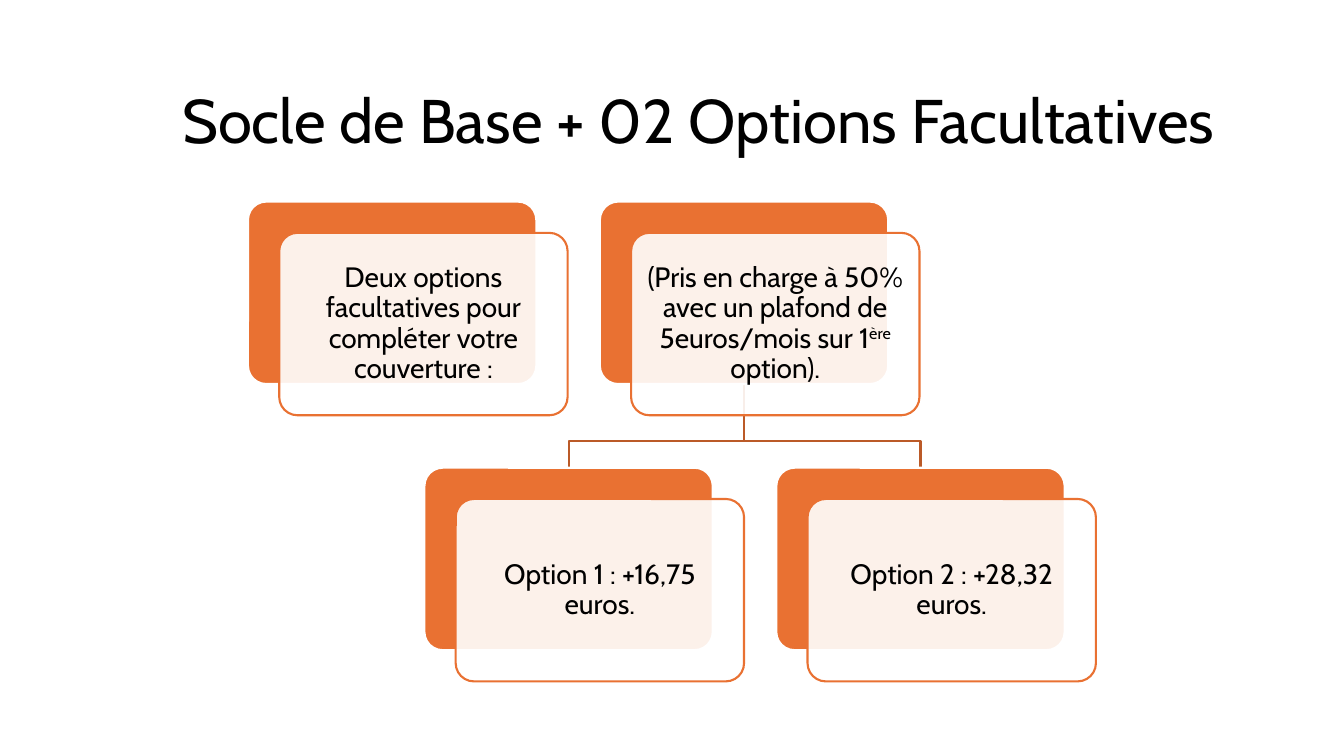
from lxml import etree
from pptx import Presentation
from pptx.dml.color import RGBColor
from pptx.enum import shapes, text
from pptx.oxml import ns
from pptx.util import Inches, Pt

ORANGE = RGBColor(0xE9, 0x71, 0x32)
BROWN = RGBColor(0xBB, 0x5A, 0x28)
WHITE = RGBColor(0xFF, 0xFF, 0xFF)
BLACK = RGBColor(0x00, 0x00, 0x00)
FONT = "Cabin"

CARD_W, CARD_H = 2.86, 1.81
SHIFT = 0.31
PITCH = 3.49
TOP_ROW, OPTION_ROW = 2, 4.64
TOP_LEFT, OPTION_LEFT = 2.46, 4.21

TOP_CARDS = [
    [("Deux options facultatives pour compléter votre couverture :", 0)],
    [("(Pris en charge à 50% avec un plafond de 5euros/mois sur 1", 0),
     ("ère", 30000), (" option).", 0)],
]
OPTION_CARDS = [
    [("Option 1 : +16,75 euros.", 0)],
    [("Option 2 : +28,32 euros.", 0)],
]


def format_run(r, size):
    """Give a run the slide's font and colour."""
    r.font.name = FONT
    r.font.size = Pt(size)
    r.font.color.rgb = BLACK


def add_title(slide, left, top, width, height):
    """Place the title, set slightly right of centre by its left inset."""
    sp = slide.shapes.title
    sp.left, sp.top, sp.width, sp.height = map(Inches, (left, top, width, height))
    tf = sp.text_frame
    tf.text = "Socle de Base + 02 Options Facultatives"
    tf.margin_left = Inches(0.62)
    tf.vertical_anchor = text.MSO_ANCHOR.MIDDLE
    p = tf.paragraphs[0]
    p.alignment = text.PP_ALIGN.CENTER
    p.line_spacing = 0.9
    format_run(p.runs[0], 44)


def add_panel(slide, left, top, fill, line):
    """Draw one rounded panel of a card."""
    sp = slide.shapes.add_shape(
        shapes.MSO_SHAPE.ROUNDED_RECTANGLE,
        Inches(left), Inches(top), Inches(CARD_W), Inches(CARD_H))
    sp.adjustments[0] = 0.1
    sp.shadow.inherit = False
    sp.fill.solid()
    sp.fill.fore_color.rgb = fill
    sp.line.color.rgb = line
    sp.line.width = Pt(1.5)
    return sp


def add_card(slide, left, top, parts):
    """Draw an orange panel and the translucent text panel over it."""
    add_panel(slide, left, top, ORANGE, WHITE)
    sp = add_panel(slide, left + SHIFT, top + SHIFT, WHITE, ORANGE)
    colour = sp.fill._xPr.find(".//" + ns.qn("a:srgbClr"))
    etree.SubElement(colour, ns.qn("a:alpha")).set("val", "90000")
    tf = sp.text_frame
    tf.word_wrap = True
    tf.vertical_anchor = text.MSO_ANCHOR.MIDDLE
    tf.margin_left = tf.margin_right = Inches(0.08)
    tf.margin_top = tf.margin_bottom = Inches(0.08)
    p = tf.paragraphs[0]
    p.alignment = text.PP_ALIGN.CENTER
    p.line_spacing = 0.9
    for words, baseline in parts:
        r = p.add_run()
        r.text = words
        format_run(r, 20)
        if baseline:
            r.font._element.set("baseline", str(baseline))


def add_branch(slide, start_x, start_y, end_x, end_y):
    """Draw an elbow line from a parent card down to an option card."""
    bend_y = end_y - 0.26
    points = [(start_x, bend_y), (end_x, bend_y), (end_x, end_y)]
    builder = slide.shapes.build_freeform(Inches(start_x), Inches(start_y))
    builder.add_line_segments(
        [(Inches(x), Inches(y)) for x, y in points], close=False)
    sp = builder.convert_to_shape()
    sp.shadow.inherit = False
    sp.fill.background()
    sp.line.color.rgb = BROWN
    sp.line.width = Pt(1.5)


def add_tree(slide):
    """Draw the branches, then both rows of cards above them."""
    parent_x = TOP_LEFT + PITCH + CARD_W / 2
    for i in range(len(OPTION_CARDS)):
        option_x = OPTION_LEFT + i * PITCH + CARD_W / 2
        add_branch(slide, parent_x, TOP_ROW + CARD_H, option_x, OPTION_ROW)
    rows = [(TOP_LEFT, TOP_ROW, TOP_CARDS),
            (OPTION_LEFT, OPTION_ROW, OPTION_CARDS)]
    for left, top, cards in rows:
        for i, parts in enumerate(cards):
            add_card(slide, left + i * PITCH, top, parts)


def main():
    """Build and save the slide."""
    prs = Presentation()
    prs.slide_width, prs.slide_height = Inches(13.33), Inches(7.5)
    slide = prs.slides.add_slide(prs.slide_layouts[5])
    add_title(slide, 0.92, 0.61, 11.5, 1.24)
    add_tree(slide)
    prs.save("out.pptx")


if __name__ == "__main__":
    main()
